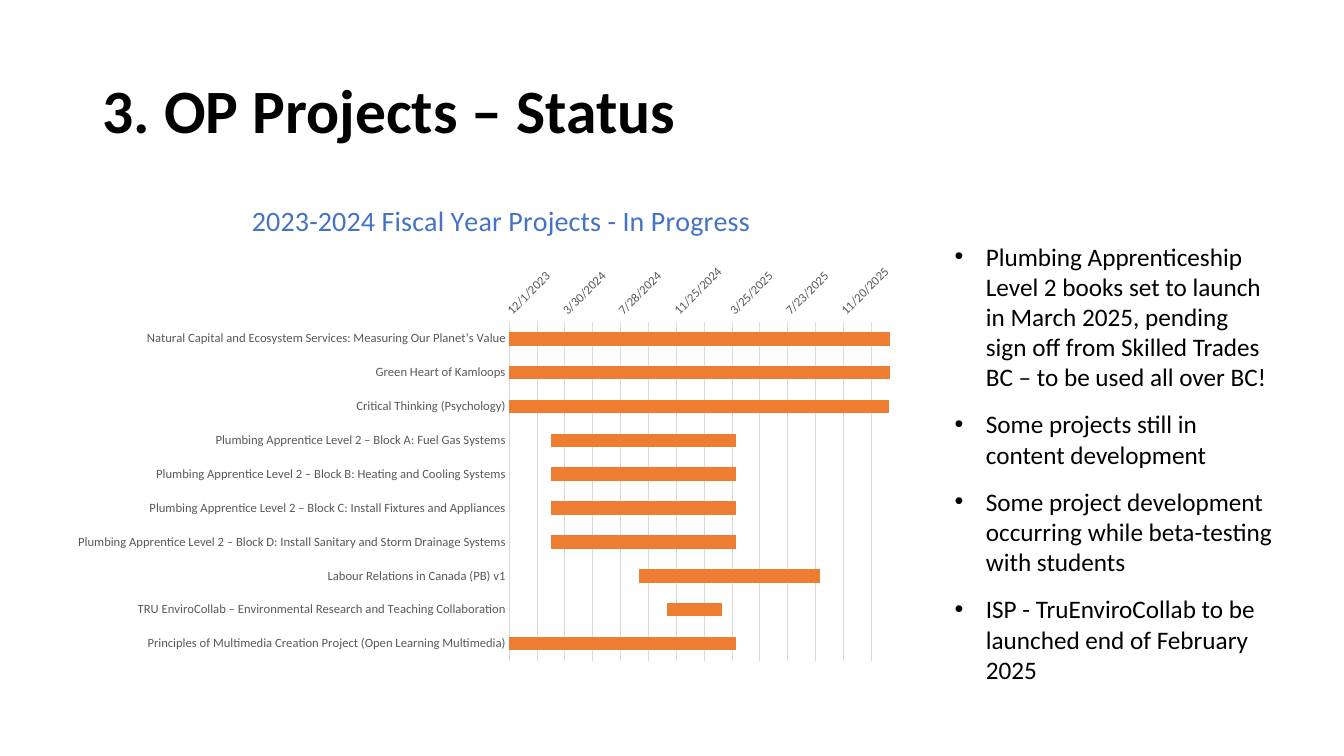
import pptx
import pptx.chart.data
import pptx.dml.color
import pptx.enum.chart
import pptx.enum.text
import pptx.oxml.ns
import pptx.util
from dataclasses import dataclass
from lxml import etree

Inches, Pt, qn = pptx.util.Inches, pptx.util.Pt, pptx.oxml.ns.qn
FACE = "Calibri"
BLACK, GREY, PALE, BLUE, ORANGE = "000000", "595959", "D9D9D9", "4472C4", "ED7D31"


@dataclass
class Project:
    name: str
    start: int  # date serial number
    days: int


@dataclass
class Box:
    left: float
    top: float
    width: float
    height: float

    def lengths(self) -> list:
        return [Inches(n) for n in (self.left, self.top, self.width, self.height)]


BLOCK = "Plumbing Apprentice Level 2 – Block "
PROJECTS = [
    Project("Natural Capital and Ecosystem Services: Measuring Our Planet’s Value", 45200, 910),
    Project("Green Heart of Kamloops", 45200, 910),
    Project("Critical Thinking (Psychology)", 45260, 820),
    Project(BLOCK + "A: Fuel Gas Systems", 45350, 400),
    Project(BLOCK + "B: Heating and Cooling Systems", 45350, 400),
    Project(BLOCK + "C: Install Fixtures and Appliances", 45350, 400),
    Project(BLOCK + "D: Install Sanitary and Storm Drainage Systems", 45350, 400),
    Project("Labour Relations in Canada (PB) v1", 45540, 390),
    Project("TRU EnviroCollab – Environmental Research and Teaching Collaboration", 45600, 120),
    Project("Principles of Multimedia Creation Project (Open Learning Multimedia)", 45260, 490),
]
NOTES = [
    "Plumbing Apprenticeship Level 2 books set to launch in March 2025, pending sign off "
    "from Skilled Trades BC – to be used all over BC!",
    "Some projects still in content development",
    "Some project development occurring while beta-testing with students",
    "ISP - TruEnviroCollab to be launched end of February 2025",
]


def color(code: str) -> pptx.dml.color.RGBColor:
    return pptx.dml.color.RGBColor.from_string(code)


def style(font, size: float, code: str, bold: bool = False) -> None:
    font.name, font.size, font.bold = FACE, Pt(size), bold
    font.color.rgb = color(code)


def rule(line) -> None:
    line.color.rgb = color(PALE)
    line.width = Pt(0.75)


def place(node, index: int, **parts: float) -> None:
    """Give a chart part a fixed place, in shares of the chart."""
    for old in node.findall(qn("c:layout")):
        node.remove(old)
    layout = etree.Element(qn("c:layout"))
    node.insert(index, layout)
    manual = etree.SubElement(layout, qn("c:manualLayout"))
    if "w" in parts:
        etree.SubElement(manual, qn("c:layoutTarget"), val="inner")
    for key in ("x", "y"):
        etree.SubElement(manual, qn(f"c:{key}Mode"), val="edge")
    for key, share in parts.items():
        etree.SubElement(manual, qn(f"c:{key}"), val=str(share))


def add_title(slide, box: Box, text: str) -> None:
    frame = slide.shapes.add_textbox(*box.lengths()).text_frame
    frame.word_wrap = True
    frame.vertical_anchor = pptx.enum.text.MSO_ANCHOR.MIDDLE
    para = frame.paragraphs[0]
    para.text, para.line_spacing = text, 0.9
    style(para.font, 44, BLACK, True)


def add_notes(slide, box: Box, notes: list[str]) -> None:
    frame = slide.shapes.add_textbox(*box.lengths()).text_frame
    frame.word_wrap = True
    frame.auto_size = pptx.enum.text.MSO_AUTO_SIZE.SHAPE_TO_FIT_TEXT
    for i, note in enumerate(notes):
        para = frame.add_paragraph() if i else frame.paragraphs[0]
        para.text, para.space_before = note, Pt(12)
        props = para._p.get_or_add_pPr()
        props.set("marL", str(Inches(0.31)))
        props.set("indent", str(-Inches(0.31)))
        etree.SubElement(props, qn("a:buFont"), typeface="Arial")
        etree.SubElement(props, qn("a:buChar"), char="•")
        style(para.font, 18, BLACK)


def add_gantt(slide, box: Box, title: str, projects: list[Project]) -> None:
    kinds = pptx.enum.chart
    data = pptx.chart.data.CategoryChartData()
    data.categories = [p.name for p in projects]
    data.add_series("Series 1", [p.start for p in projects])
    data.add_series("Series 2", [p.days for p in projects])
    chart = slide.shapes.add_chart(
        kinds.XL_CHART_TYPE.BAR_STACKED, *box.lengths(), data).chart
    style(chart.font, 10, BLACK)
    chart.has_legend = False

    # Heading
    chart.has_title = True
    head = chart.chart_title.text_frame.paragraphs[0]
    head.text = title
    style(head.runs[0].font, 20, BLUE)
    place(chart.chart_title._element, 1, x=0.22, y=0.02)

    # Bars: the first series only sets the start dates
    plot = chart.plots[0]
    plot.gap_width, plot.overlap, plot.vary_by_categories = 150, 100, False
    start, span = plot.series
    start.format.fill.background()
    span.format.fill.solid()
    span.format.fill.fore_color.rgb = color(ORANGE)
    place(chart._chartSpace.chart.plotArea, 0, x=0.53, y=0.28, w=0.45, h=0.7)

    # Axes
    names, dates = chart.category_axis, chart.value_axis
    for axis in (names, dates):
        axis.major_tick_mark = axis.minor_tick_mark = kinds.XL_TICK_MARK.NONE
        style(axis.tick_labels.font, 9, GREY)
    names.reverse_order = True
    rule(names.format.line)
    dates.minimum_scale, dates.maximum_scale, dates.major_unit = 45261, 46082, 60
    dates.tick_labels.number_format = "m/d/yyyy"
    dates.tick_labels.number_format_is_linked = False
    dates.format.line.fill.background()
    rule(dates.major_gridlines.format.line)
    dates._element.find(f"{qn('c:txPr')}/{qn('a:bodyPr')}").set("rot", str(-45 * 60000))


def main() -> None:
    deck = pptx.Presentation()
    deck.slide_width, deck.slide_height = Inches(13.33), Inches(7.5)
    slide = deck.slides.add_slide(deck.slide_layouts[6])
    add_title(slide, Box(0.92, 0.4, 11.5, 1.45), "3. OP Projects – Status")
    add_gantt(slide, Box(0.6, 1.85, 8.4, 4.8),
              "2023-2024 Fiscal Year Projects - In Progress", PROJECTS)
    add_notes(slide, Box(9.37, 2.34, 3.37, 4.54), NOTES)
    deck.save("out.pptx")


if __name__ == "__main__":
    main()
